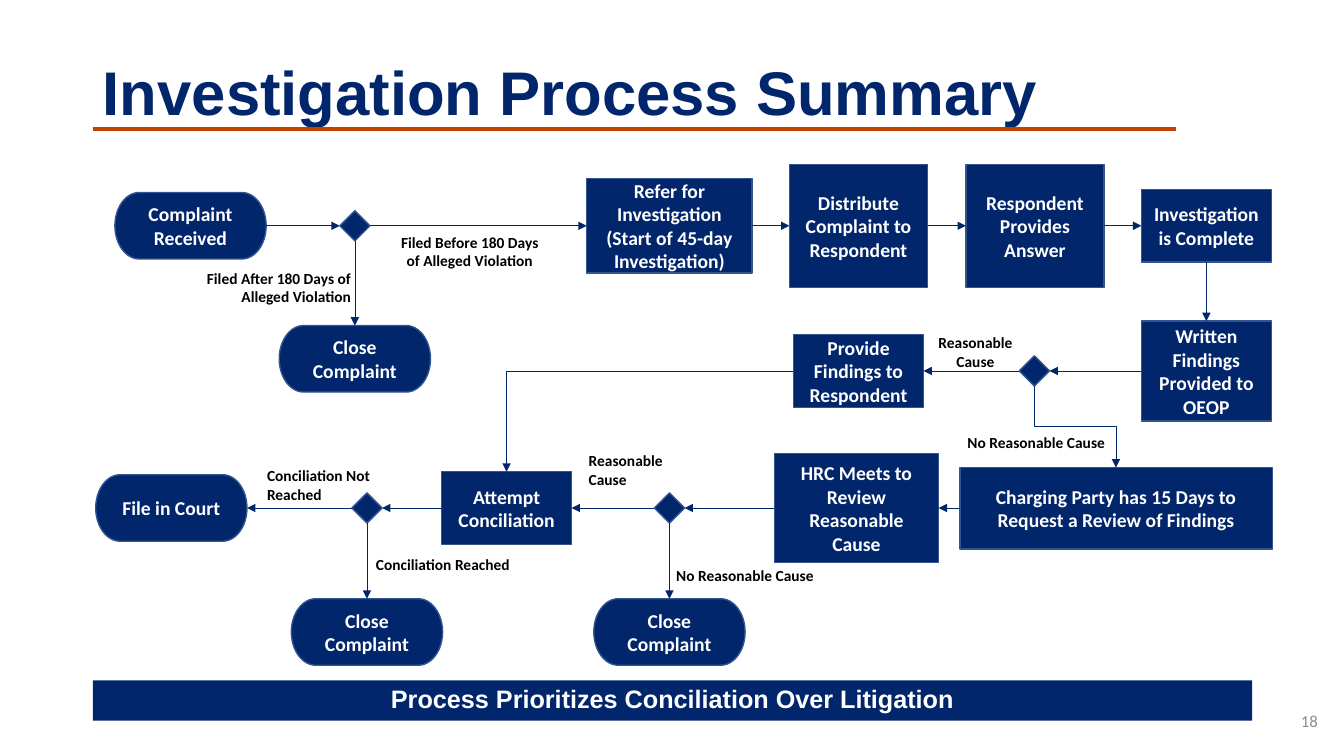
from dataclasses import dataclass

from pptx import Presentation
from pptx import util as u
from pptx.dml.color import RGBColor
from pptx.enum import shapes, text
from pptx.oxml import ns, xmlchemy

SCALE = 9144  # EMU in one px, 100 px to the inch
TOP, LEFT, BASE, RIGHT = range(4)  # connection sites
KIND = shapes.MSO_SHAPE
ALIGN = text.PP_ALIGN


@dataclass(frozen=True)
class Theme:
    navy: str = "01266C"
    edge: str = "325491"
    rust: str = "C14200"
    white: str = "FFFFFF"
    black: str = "000000"
    gray: str = "8C8C8C"
    head: str = "Arial"
    body: str = "Calibri"
    title: int = 44
    foot: int = 18
    node: int = 14
    page: int = 12
    label: int = 11


THEME = Theme()


def px(*sizes):
    return [u.Emu(size * SCALE) for size in sizes]


def tint(code):
    return RGBColor.from_string(code)


def write(frame, words, font, size, color, align, bold=True):
    frame.word_wrap = True
    frame.text = words
    for para in frame.paragraphs:
        para.alignment = align
        for run in para.runs:
            run.font.name, run.font.size = font, u.Pt(size)
            run.font.bold, run.font.color.rgb = bold, tint(color)


def place(holder, box, words, size, color, align):
    """Move a placeholder into its box and fill it."""
    holder.left, holder.top, holder.width, holder.height = px(*box)
    frame = holder.text_frame
    write(frame, words, THEME.head, size, color, align)
    frame.auto_size = text.MSO_AUTO_SIZE.NONE
    frame.vertical_anchor = text.MSO_ANCHOR.MIDDLE
    frame.paragraphs[0].line_spacing = 0.9
    return frame.paragraphs[0]


def note(slide, box, words, size, color, align, bold=True):
    area = slide.shapes.add_textbox(*px(*box))
    write(area.text_frame, words, THEME.body, size, color, align, bold)
    return area.text_frame


def wire(slide, ends, color, width, kind=shapes.MSO_CONNECTOR.STRAIGHT):
    line = slide.shapes.add_connector(kind, *px(*ends))
    line.line.color.rgb = tint(color)
    line.line.width = u.Pt(width)
    line.element.spPr.append(xmlchemy.OxmlElement("a:effectLst"))
    return line


def arrow(slide, start, site, end, goal, kind=shapes.MSO_CONNECTOR.STRAIGHT):
    line = wire(slide, (0, 0, 0, 0), THEME.navy, 0.5, kind)
    line.begin_connect(start, site)
    line.end_connect(end, goal)
    tip = xmlchemy.OxmlElement("a:tailEnd")
    tip.set("type", "triangle")
    line.element.spPr.find(ns.qn("a:ln")).append(tip)
    return line.element.spPr


def header(slide, box):
    x, y, w, h = box
    place(slide.shapes.title, box, "Investigation Process Summary",
          THEME.title, THEME.navy, ALIGN.LEFT)
    wire(slide, (x, y + 88, x + w, y + 88), THEME.rust, 2.25)


def footer(slide, box):
    x, y, w, h = box
    bar = slide.placeholders[1]
    para = place(bar, box, "Process Prioritizes Conciliation Over Litigation",
                 THEME.foot, THEME.white, ALIGN.CENTER)
    bar.fill.solid()
    bar.fill.fore_color.rgb = tint(THEME.navy)
    para.space_before = u.Pt(10)
    props = para._p.get_or_add_pPr()
    props.set("marL", "0")
    props.set("indent", "0")
    props.append(xmlchemy.OxmlElement("a:buNone"))
    # Page number
    frame = note(slide, (x + w + 32, y + 20, 43, 40), "18", THEME.page,
                 THEME.gray, ALIGN.RIGHT, bold=False)
    frame.vertical_anchor = text.MSO_ANCHOR.MIDDLE


def flow(slide, box):
    x, y = box[:2]
    row1, row2, row3, row4 = 61, 205, 341, 464  # row centres

    def node(kind, left, mid, w, h, words=""):
        shape = slide.shapes.add_shape(
            kind, *px(x + left, y + mid - h / 2, w, h))
        shape.shadow.inherit = False
        shape.fill.solid()
        shape.fill.fore_color.rgb = tint(THEME.navy)
        shape.line.color.rgb = tint(THEME.edge)
        shape.line.width = u.Pt(1)
        if words:
            write(shape.text_frame, words, THEME.body, THEME.node,
                  THEME.white, ALIGN.CENTER)
        return shape

    def stop(left, mid, words):
        return node(KIND.FLOWCHART_TERMINATOR, left, mid, 150, 66, words)

    def fork(left, mid):
        return node(KIND.FLOWCHART_DECISION, left, mid, 30, 30)

    def step(left, mid, w, h, words):
        return node(KIND.FLOWCHART_PROCESS, left, mid, w, h, words)

    # Intake and investigation
    start = stop(19, row1, "Complaint Received")
    timely = fork(242, row1)
    late = stop(182, 193, "Close Complaint")
    refer = step(487, row1, 164, 94,
                 "Refer for Investigation\n(Start of 45-day Investigation)")
    share = step(688, row1, 137, 122, "Distribute Complaint to Respondent")
    reply = step(863, row1, 137, 122, "Respondent Provides Answer")
    done = step(1037, row1, 129, 72, "Investigation is Complete")

    # Findings
    report = step(1037, row2, 129, 99, "Written Findings Provided to OEOP")
    cause = fork(916, row2)
    inform = step(692, row2, 129, 72, "Provide Findings to Respondent")

    # Review and conciliation
    appeal = step(857, row3, 310, 81,
                  "Charging Party has 15 Days to Request a Review of Findings")
    meet = step(673, row3, 163, 108, "HRC Meets to Review Reasonable Cause")
    review = fork(554, row3)
    settle = step(343, row3, 129, 72, "Attempt Conciliation")
    result = fork(254, row3)
    court = stop(0, row3, "File in Court")
    settled, denied = [stop(left, row4, "Close Complaint")
                       for left in (194, 494)]

    # Straight arrows: right, left, down
    top = (start, timely, refer, share, reply, done)
    for a, b in zip(top, top[1:]):
        arrow(slide, a, RIGHT, b, LEFT)
    for chain in ((report, cause, inform),
                  (appeal, meet, review, settle, result, court)):
        for a, b in zip(chain, chain[1:]):
            arrow(slide, a, LEFT, b, RIGHT)
    for a, b in ((timely, late), (done, report),
                 (review, denied), (result, settled)):
        arrow(slide, a, BASE, b, TOP)

    # Bent arrows: one corner, then down-across-down
    elbow = shapes.MSO_CONNECTOR.ELBOW
    turn = arrow(slide, inform, LEFT, settle, TOP, elbow)
    turn.find(ns.qn("a:prstGeom")).set("prst", "bentConnector2")
    drop = arrow(slide, cause, BASE, appeal, TOP, elbow)
    drop.xfrm.set("rot", "16200000")
    drop.xfrm.set("flipH", "1")

    # Branch labels
    for left, high, w, h, align, words in (
        (84, 99, 179, 47, ALIGN.RIGHT,
         "Filed After 180 Days of Alleged Violation"),
        (289, 63, 164, 47, ALIGN.CENTER,
         "Filed Before 180 Days of Alleged Violation"),
        (808, 163, 129, 47, ALIGN.CENTER, "Reasonable Cause"),
        (788, 262, 223, 29, ALIGN.RIGHT, "No Reasonable Cause"),
        (479, 280, 129, 47, ALIGN.LEFT, "Reasonable Cause"),
        (547, 394, 175, 29, ALIGN.RIGHT, "No Reasonable Cause"),
        (268, 383, 263, 29, ALIGN.LEFT, "Conciliation Reached"),
        (160, 295, 129, 47, ALIGN.LEFT, "Conciliation Not Reached"),
    ):
        note(slide, (x + left, y + high, w, h), words, THEME.label,
             THEME.black, align)


def main():
    deck = Presentation()
    deck.slide_width, deck.slide_height = px(1333, 750)
    slide = deck.slides.add_slide(deck.slide_layouts[1])
    header(slide, (92, 40, 1074, 109))
    flow(slide, (95, 163, 1167, 497))
    footer(slide, (92, 675, 1150, 40))
    deck.save("out.pptx")


if __name__ == "__main__":
    main()
